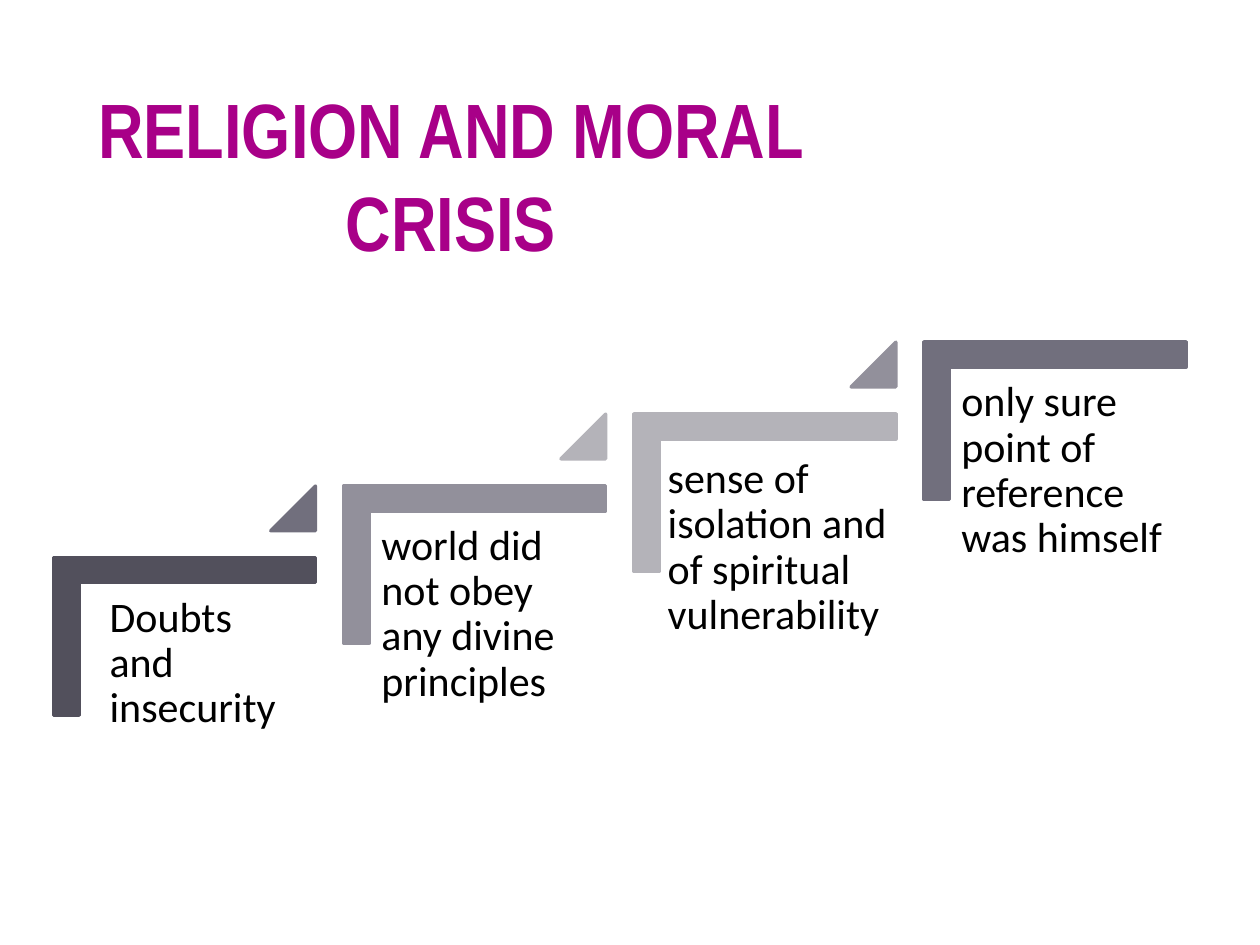
import pptx
import pptx.dml.color
import pptx.enum.shapes
import pptx.enum.text
import pptx.util

Cm, Pt = pptx.util.Cm, pptx.util.Pt
SHAPE = pptx.enum.shapes.MSO_SHAPE
ALIGN = pptx.enum.text.PP_ALIGN
ANCHOR = pptx.enum.text.MSO_ANCHOR

STEP_RUN, STEP_RISE = 5.85, 1.45

# Wording, bar colour, and left, top and width of the text
STEPS = [
    ("Doubts and insecurity", "52505C", 1.96, 11.76, 4.04),
    ("world did not obey any divine principles", "92909B", 7.44, 10.31, 4.78),
    ("sense of isolation and of spiritual vulnerability", "B4B3B9", 13.21, 8.97, 4.93),
    ("only sure point of reference was himself", "716F7D", 19.13, 7.42, 4.78),
]
TRIANGLE_COLORS = ["716F7D", "B4B3B9", "92909B"]


def rgb(value):
    return pptx.dml.color.RGBColor.from_string(value)


def add_solid(s, kind, left, top, width, height, color, adjustments):
    """Add a preset shape whose fill and outline share one colour."""
    sp = s.shapes.add_shape(kind, Cm(left), Cm(top), Cm(width), Cm(height))
    for i, value in enumerate(adjustments):
        sp.adjustments[i] = value
    sp.shadow.inherit = False
    sp.fill.solid()
    sp.fill.fore_color.rgb = rgb(color)
    sp.line.color.rgb = rgb(color)
    sp.line.width = Pt(2)
    return sp


def add_text(s, text, left, top, width, height, font, size, color):
    sp = s.shapes.add_textbox(Cm(left), Cm(top), Cm(width), Cm(height))
    tf = sp.text_frame
    tf.word_wrap = True
    tf.text = text
    r = tf.paragraphs[0].runs[0]
    r.font.name = font
    r.font.size = Pt(size)
    r.font.color.rgb = rgb(color)
    return tf


def add_title(s, text):
    tf = add_text(s, text, 0.84, 1.07, 16.51, 4.88, "Arial Narrow", 44, "A80088")
    tf.vertical_anchor = ANCHOR.MIDDLE
    p = tf.paragraphs[0]
    p.alignment = ALIGN.CENTER
    p.runs[0].font.bold = True


def add_step_text(s, text, left, top, width):
    tf = add_text(s, text, left, top, width, 4.19, "Calibri", 24, "000000")
    tf.margin_left = tf.margin_right = tf.margin_top = tf.margin_bottom = Cm(0.25)
    tf.paragraphs[0].line_spacing = 0.9


def main():
    prs = pptx.Presentation()
    prs.slide_width, prs.slide_height = Cm(25.4), Cm(19.05)
    s = prs.slides.add_slide(prs.slide_layouts[6])
    add_title(s, "RELIGION AND MORAL CRISIS")
    for i, (text, color, left, top, width) in enumerate(STEPS):
        dx, dy = i * STEP_RUN, -i * STEP_RISE
        corner = add_solid(s, SHAPE.CORNER, 2.13 + dx, 10.19 + dy, 3.18, 5.28,
                           color, [0.16, 0.16])
        corner.rotation = 90
        add_step_text(s, text, left, top, width)
        if i < len(TRIANGLE_COLORS):
            add_solid(s, SHAPE.ISOSCELES_TRIANGLE, 5.46 + dx, 9.8 + dy, 0.9, 0.9,
                      TRIANGLE_COLORS[i], [1])
    prs.save("out.pptx")


if __name__ == "__main__":
    main()
